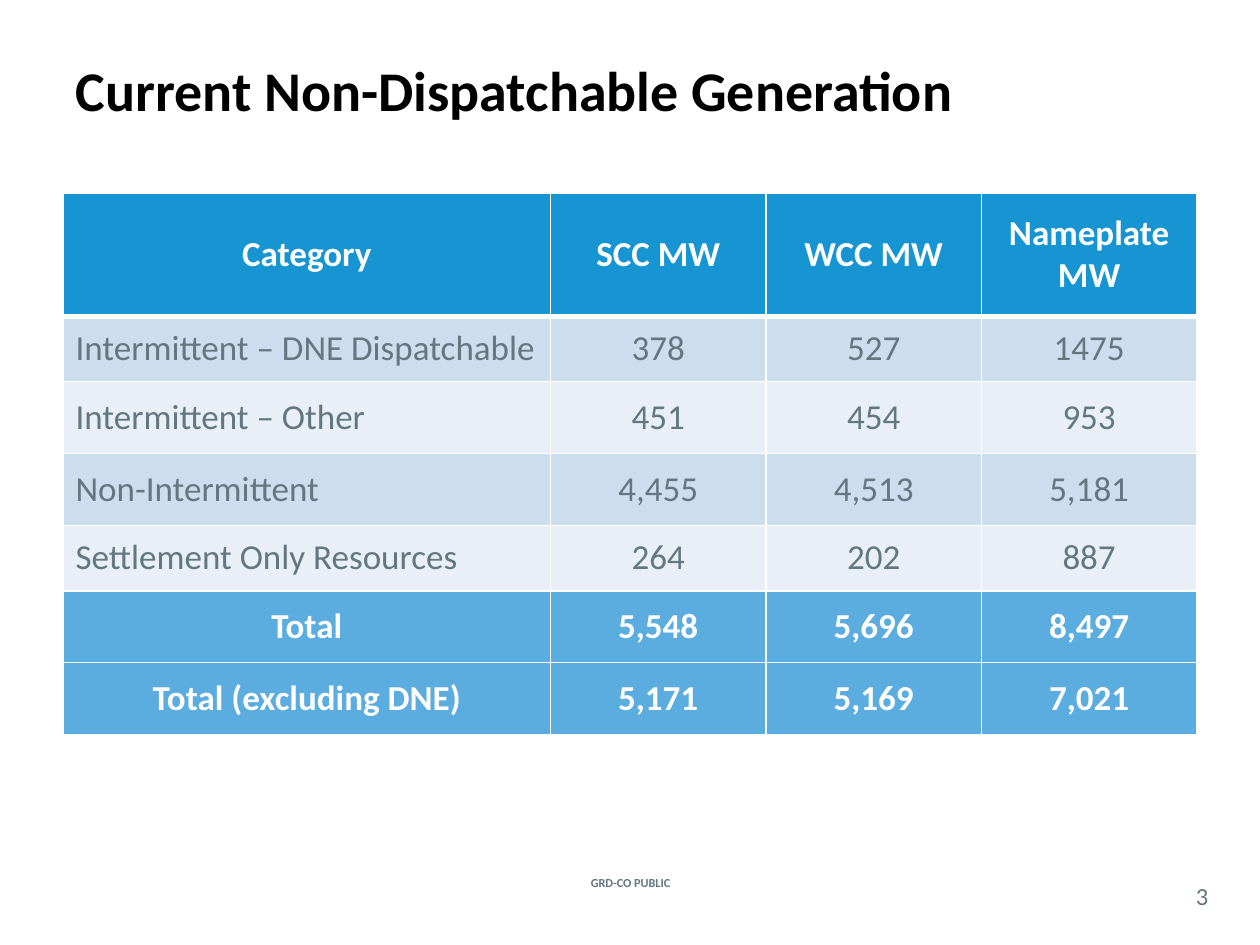
"""Build the slide on current non-dispatchable generation."""

import dataclasses

import lxml.etree
import pptx
import pptx.dml.color
import pptx.enum.text
import pptx.oxml.ns
import pptx.util

Inches = pptx.util.Inches
Pt = pptx.util.Pt
Align = pptx.enum.text.PP_ALIGN
Anchor = pptx.enum.text.MSO_ANCHOR

FONT = "Calibri"
COLORS = {
    "title": "000000",
    "body": "62777F",
    "white": "FFFFFF",
    "header": "1795D2",
    "band_dark": "CCDDEE",
    "band_light": "E8EFF7",
    "total": "5BACDF",
}
COLUMN_WIDTHS = (3.87, 1.71, 1.71, 1.71)


@dataclasses.dataclass(frozen=True)
class GenerationRow:
    labels: tuple[str, ...]
    height: float
    fill: str
    emphasized: bool = False


ROWS = (
    GenerationRow(("Category", "SCC MW", "WCC MW", "Nameplate MW"), 0.98, "header", True),
    GenerationRow(("Intermittent – DNE Dispatchable", "378", "527", "1475"), 0.52, "band_dark"),
    GenerationRow(("Intermittent – Other", "451", "454", "953"), 0.57, "band_light"),
    GenerationRow(("Non-Intermittent", "4,455", "4,513", "5,181"), 0.57, "band_dark"),
    GenerationRow(("Settlement Only Resources", "264", "202", "887"), 0.52, "band_light"),
    GenerationRow(("Total", "5,548", "5,696", "8,497"), 0.57, "total", True),
    GenerationRow(("Total (excluding DNE)", "5,171", "5,169", "7,021"), 0.57, "total", True),
)


def rgb(color: str) -> pptx.dml.color.RGBColor:
    return pptx.dml.color.RGBColor.from_string(COLORS[color])


def write_text(frame, text: str, *, size: float, color: str = "body",
               bold: bool = False, align=Align.CENTER) -> None:
    frame.word_wrap = True
    paragraph = frame.paragraphs[0]
    paragraph.alignment = align
    run = paragraph.add_run()
    run.text = text
    run.font.name = FONT
    run.font.size = Pt(size)
    run.font.bold = bold
    run.font.color.rgb = rgb(color)


def add_label(slide, text: str, left: float, top: float, width: float, height: float,
              *, margin: float, **text_format) -> None:
    label = slide.shapes.add_textbox(Inches(left), Inches(top), Inches(width), Inches(height))
    frame = label.text_frame
    frame.vertical_anchor = Anchor.MIDDLE
    frame.margin_left = frame.margin_right = Inches(margin)
    frame.margin_top = frame.margin_bottom = Inches(margin / 2)
    write_text(frame, text, **text_format)


def add_borders(cell, widths: dict[str, float]) -> None:
    qn = pptx.oxml.ns.qn
    properties = cell._tc.get_or_add_tcPr()
    for side, width in widths.items():
        line = lxml.etree.SubElement(properties, qn(f"a:ln{side}"), w=str(Pt(width)))
        solid = lxml.etree.SubElement(line, qn("a:solidFill"))
        lxml.etree.SubElement(solid, qn("a:srgbClr"), val=COLORS["white"])


def add_generation_table(slide) -> None:
    table = slide.shapes.add_table(
        len(ROWS), len(COLUMN_WIDTHS), Inches(0.5), Inches(1.53),
        Inches(sum(COLUMN_WIDTHS)), Inches(sum(row.height for row in ROWS))).table
    for column, width in zip(table.columns, COLUMN_WIDTHS):
        column.width = Inches(width)
    for row_index, row in enumerate(ROWS):
        table.rows[row_index].height = Inches(row.height)
        borders = {"L": 1, "R": 1, "T": 3 if row_index == 1 else 1,
                   "B": 3 if row_index == 0 else 1}
        for column_index, label in enumerate(row.labels):
            cell = table.cell(row_index, column_index)
            add_borders(cell, borders)
            cell.fill.solid()
            cell.fill.fore_color.rgb = rgb(row.fill)
            cell.vertical_anchor = Anchor.MIDDLE
            centered = row.emphasized or column_index > 0
            write_text(cell.text_frame, label, size=20, bold=row.emphasized,
                       color="white" if row.emphasized else "body",
                       align=Align.CENTER if centered else Align.LEFT)


def main() -> None:
    presentation = pptx.Presentation()
    presentation.slide_width = Inches(10)
    presentation.slide_height = Inches(7.5)
    slide = presentation.slides.add_slide(presentation.slide_layouts[5])

    title = slide.shapes.title
    title.left, title.top = Inches(0.5), Inches(0.08)
    title.width, title.height = Inches(9), Inches(1.25)
    title.text_frame.vertical_anchor = Anchor.MIDDLE
    write_text(title.text_frame, "Current Non-Dispatchable Generation",
               size=32, color="title", bold=True, align=Align.LEFT)

    add_generation_table(slide)
    add_label(slide, "GRD-CO PUBLIC", 4.27, 6.92, 1.47, 0.17, margin=0.1, size=7, bold=True)
    add_label(slide, "3", 9.33, 6.96, 0.42, 0.29, margin=0, size=14)
    presentation.save("out.pptx")


if __name__ == "__main__":
    main()
